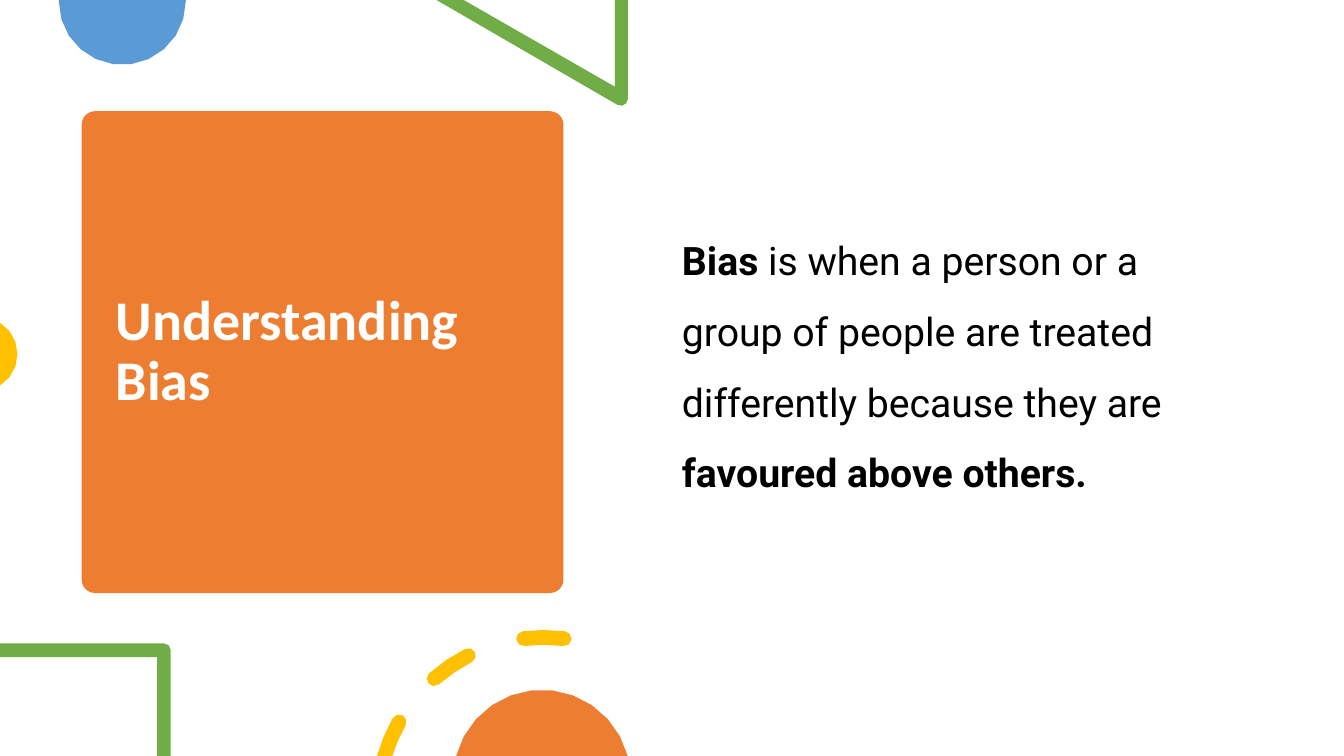
from dataclasses import dataclass
from math import asin, ceil, cos, degrees, radians, sin, sqrt

from pptx import Presentation
from pptx.dml.color import RGBColor
from pptx.enum.shapes import MSO_SHAPE
from pptx.enum.text import MSO_ANCHOR, MSO_AUTO_SIZE, PP_ALIGN
from pptx.util import Inches, Pt

COLS, ROWS = 40, 22.5
CELL = Inches(13.333) / COLS
SLACK = 0.02
Point = tuple[float, float]


@dataclass(frozen=True)
class Theme:
    orange: str = "ED7D31"
    blue: str = "5B9BD5"
    green: str = "70AD47"
    gold: str = "FFC000"
    white: str = "FFFFFF"
    black: str = "000000"
    head: str = "Calibri"
    text: str = "Roboto"
    big: int = 40
    mid: int = 28


@dataclass(frozen=True)
class Box:
    col: float
    row: float
    wide: float
    high: float

    def emu(self) -> list[int]:
        return [grid(n) for n in (self.col, self.row, self.wide, self.high)]


@dataclass(frozen=True)
class Shape:
    color: str
    paths: list[list[Point]]


@dataclass(frozen=True)
class Dash:
    start: float
    end: float


def grid(n: float) -> int:
    return round(n * CELL)


def polar(col: float, row: float, size: float, turn: float) -> Point:
    return col + size * cos(radians(turn)), row + size * sin(radians(turn))


def arc(col: float, row: float, size: float, start: float, end: float) -> list[Point]:
    sweep = end - start
    steps = ceil(radians(abs(sweep)) / sqrt(8 * SLACK / size))
    return [polar(col, row, size, start + sweep * i / steps) for i in range(steps + 1)]


def stroke(dash: Dash, col: float, row: float, size: float, half: float) -> list[Point]:
    def edge(r: float) -> float:
        return max(dash.start, 180 + degrees(asin((row - ROWS) / r)))

    def cap(turn: float, side: float) -> list[Point]:
        return arc(*polar(col, row, size, turn), half, side, side + 180)[1:-1]

    outer, inner = size + half, size - half
    rim = arc(col, row, outer, edge(outer), dash.end)
    back = arc(col, row, inner, dash.end, edge(inner))
    tail = cap(dash.start, dash.start + 180) if edge(inner) == dash.start else []
    return rim + cap(dash.end, dash.end) + back + tail


def paint(shape, color: str) -> None:
    shape.shadow.inherit = False
    shape.fill.solid()
    shape.fill.fore_color.rgb = RGBColor.from_string(color)
    shape.line.fill.background()


def draw(slide, item: Shape) -> None:
    pen = None
    for path in item.paths:
        first, *rest = [(grid(x), grid(y)) for x, y in path]
        if pen is None:
            pen = slide.shapes.build_freeform(*first, scale=1.0)
        else:
            pen.move_to(*first)
        pen.add_line_segments(rest, close=True)
    paint(pen.convert_to_shape(), item.color)


def write(shape, runs: list[tuple[str, bool]], *, font: str, size: int, color: str,
          space: float, before: int = 0, anchor=MSO_ANCHOR.TOP) -> None:
    frame = shape.text_frame
    frame.word_wrap = True
    frame.auto_size = MSO_AUTO_SIZE.NONE
    frame.vertical_anchor = anchor
    para = frame.paragraphs[0]
    para.alignment = PP_ALIGN.LEFT
    para.line_spacing = space
    para.space_before = Pt(before)
    for words, bold in runs:
        run = para.add_run()
        run.text = words
        run.font.name = font
        run.font.size = Pt(size)
        run.font.bold = bold
        run.font.color.rgb = RGBColor.from_string(color)


def main() -> None:
    look = Theme()
    deck = Presentation()
    deck.slide_width, deck.slide_height = grid(COLS), grid(ROWS)
    slide = deck.slides.add_slide(deck.slide_layouts[5])

    card = slide.shapes.add_shape(
        MSO_SHAPE.ROUNDED_RECTANGLE, *Box(2.43, 3.31, 14.34, 14.34).emu())
    card.adjustments[0] = 0.028
    paint(card, look.orange)

    title = slide.shapes.title
    title.left, title.top, title.width, title.height = Box(3.15, 3.64, 12.93, 13.68).emu()
    write(title, [("Understanding Bias", True)], font=look.head, size=look.big,
          color=look.white, space=0.9, anchor=MSO_ANCHOR.MIDDLE)
    card.element.addnext(title.element)

    dashes = [Dash(180, 209.5), Dash(228.7, 243), Dash(263, 277)]
    wedge = [(18.69, 0), (18.3, 0), (18.3, 2.58), (13.8, 0), (12.99, 0),
             *arc(18.48, 2.94, 0.21, 120, 0)]
    frame = [(0, 19.15), *arc(4.88, 19.35, 0.2, 270, 360),
             (5.08, ROWS), (4.68, ROWS), (4.68, 19.56), (0, 19.56)]
    for item in (
        Shape(look.blue, [[(5.53, 0), (1.75, 0), *arc(3.64, 0.04, 1.89, 180, 0)]]),
        Shape(look.green, [wedge]),
        Shape(look.gold, [arc(-0.58, 10.54, 1.1, -58.2, 58.2)]),
        Shape(look.green, [frame]),
        Shape(look.gold, [stroke(d, 16.19, 23.92, 4.95, 0.22) for d in dashes]),
        Shape(look.orange, [arc(16.13, 23.17, 2.64, 194.7, 345.3)]),
    ):
        draw(slide, item)

    body = slide.shapes.add_textbox(*Box(20, 6.2, 17.25, 9.78).emu())
    write(body, [
        ("Bias", True),
        (" is when a person or a group of people are treated differently"
         " because they are ", False),
        ("favoured above others. ", True),
    ], font=look.text, size=look.mid, color=look.black, space=1.5, before=10)

    deck.save("out.pptx")


if __name__ == "__main__":
    main()
